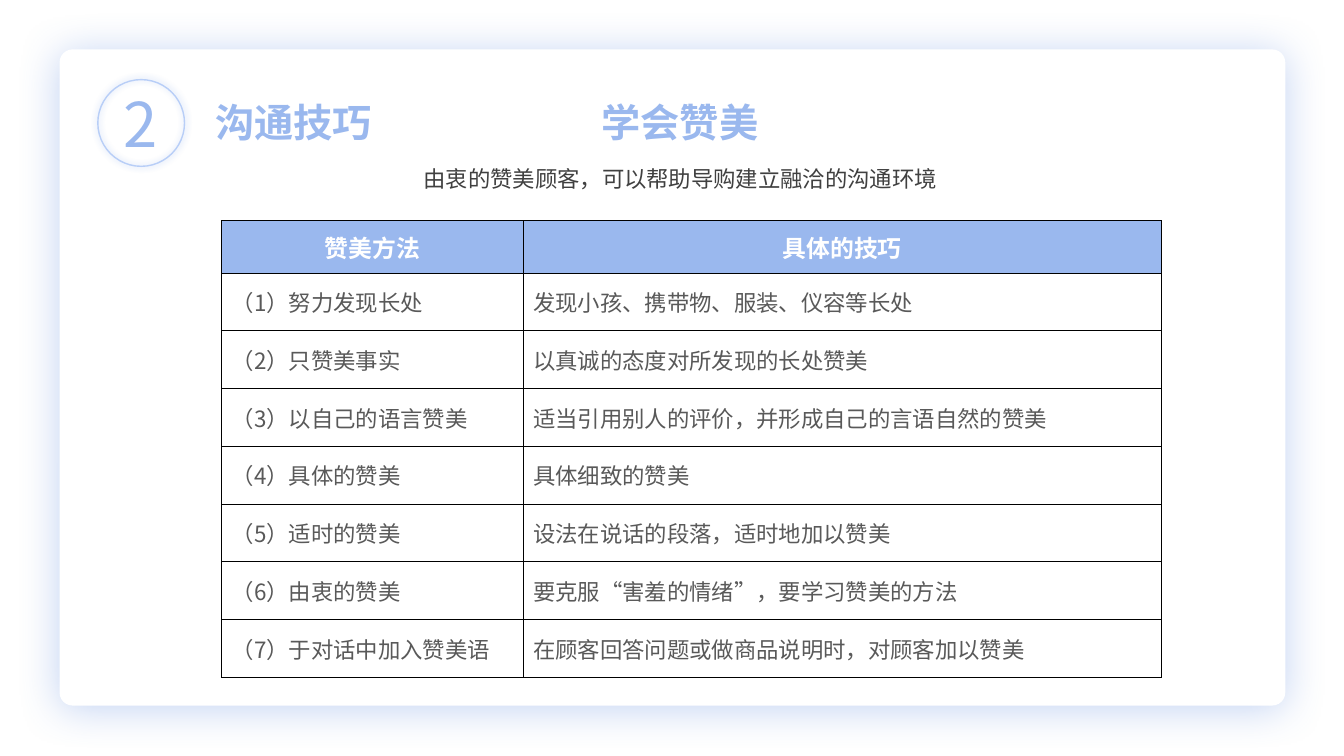
import pptx
import pptx.util
import pptx.dml.color
import pptx.enum.shapes
import pptx.enum.text
import pptx.oxml
import pptx.oxml.ns

THEME = {
    "font": "Noto Sans CJK SC",
    "accent": "9AB8EE", "ring": "B8CEF7", "white": "FFFFFF",
    "dark": "404040", "body": "595959", "border": "000000",
    "card_glow": "6891E1", "ring_glow": "3F78E2",
    "number": 44, "title": 28, "header": 17, "text": 16,
}
RGB = pptx.dml.color.RGBColor.from_string
ALIGN = pptx.enum.text.PP_ALIGN
SHAPE = pptx.enum.shapes.MSO_SHAPE
NS = pptx.oxml.ns.nsdecls("a")

prs = pptx.Presentation()
prs.slide_width = pptx.util.Inches(13.33)
prs.slide_height = pptx.util.Inches(7.5)
s = prs.slides.add_slide(prs.slide_layouts[6])
COL, ROW = prs.slide_width / 100, prs.slide_height / 100


def write(tf, text, size="text", color="body", bold=False, align=ALIGN.LEFT,
          spacing=None, before=None):
    p = tf.paragraphs[0]
    p.alignment = align
    p.line_spacing = spacing
    p.space_before = before
    r = p.add_run()
    r.text = text
    r.font.name = THEME["font"]
    r.font.size = pptx.util.Pt(THEME[size])
    r.font.bold = bold
    r.font.color.rgb = RGB(THEME[color])
    ea = pptx.oxml.parse_xml(f'<a:ea {NS} typeface="{THEME["font"]}"/>')
    r.font._element.find(pptx.oxml.ns.qn("a:latin")).addnext(ea)


def place(x, y, w, h):
    return int(x * COL), int(y * ROW), int(w * COL), int(h * ROW)


card = s.shapes.add_shape(SHAPE.ROUNDED_RECTANGLE, *place(4.43, 6.53, 91.2, 86.8))
card.adjustments[0] = 0.02
card.fill.solid()
card.fill.fore_color.rgb = RGB(THEME["white"])
card.line.fill.background()

ring = s.shapes.add_shape(SHAPE.OVAL, *place(7.28, 10.53, 6.45, 11.47))
ring.fill.background()
ring.line.color.rgb = RGB(THEME["ring"])
ring.line.width = pptx.util.Pt(1)

for sp, glow, blur, dist in ((card, "card_glow", 30, 3), (ring, "ring_glow", 5, 0)):
    sp.shadow.inherit = False
    sp._element.spPr.find(pptx.oxml.ns.qn("a:effectLst")).append(pptx.oxml.parse_xml(
        f'<a:outerShdw {NS} blurRad="{pptx.util.Pt(blur)}" dist="{pptx.util.Pt(dist)}" '
        f'dir="5400000" algn="ctr" rotWithShape="0"><a:srgbClr val="{THEME[glow]}">'
        '<a:alpha val="40000"/></a:srgbClr></a:outerShdw>'))

heading = dict(size="title", color="accent", bold=True)
for box, text, style in (
    ((7.88, 10.67, 5.1, 11.2), "2",
     dict(size="number", color="accent", align=ALIGN.CENTER)),
    ((15.3, 12.4, 23.7, 7.6), "沟通技巧", heading),
    ((30.98, 13.07, 39.23, 7.47), "学会赞美",
     dict(heading, align=ALIGN.CENTER, spacing=0.9, before=pptx.util.Pt(10))),
    ((25.43, 19.47, 50.4, 6.13), "由衷的赞美顾客，可以帮助导购建立融洽的沟通环境",
     dict(color="dark", align=ALIGN.CENTER, spacing=1.5)),
):
    tf = s.shapes.add_textbox(*place(*box)).text_frame
    tf.word_wrap = True
    write(tf, text, **style)

rows = [
    ("赞美方法", "具体的技巧"),
    ("努力发现长处", "发现小孩、携带物、服装、仪容等长处"),
    ("只赞美事实", "以真诚的态度对所发现的长处赞美"),
    ("以自己的语言赞美", "适当引用别人的评价，并形成自己的言语自然的赞美"),
    ("具体的赞美", "具体细致的赞美"),
    ("适时的赞美", "设法在说话的段落，适时地加以赞美"),
    ("由衷的赞美", "要克服“害羞的情绪”，要学习赞美的方法"),
    ("于对话中加入赞美语", "在顾客回答问题或做商品说明时，对顾客加以赞美"),
]
table = s.shapes.add_table(len(rows), 2, *place(16.5, 29.2, 69.9, 60.4)).table
table.first_row = table.horz_banding = False
for column, share in zip(table.columns, (22.43, 47.48)):
    column.width = int(share * COL)

for i, row in enumerate(rows):
    table.rows[i].height = int((7.64 if i else 6.93) * ROW)
    for j, text in enumerate(row):
        cell = table.cell(i, j)
        cell.vertical_anchor = pptx.enum.text.MSO_ANCHOR.MIDDLE
        cell.fill.solid()
        cell.fill.fore_color.rgb = RGB(THEME["white" if i else "accent"])
        if i:
            write(cell.text_frame, text if j else f"（{i}）{text}")
        else:
            write(cell.text_frame, text, size="header", color="white", bold=True,
                  align=ALIGN.CENTER)
        for k, side in enumerate(("lnL", "lnR", "lnT", "lnB")):
            cell._tc.tcPr.insert(k, pptx.oxml.parse_xml(
                f'<a:{side} {NS} w="{pptx.util.Pt(1)}"><a:solidFill>'
                f'<a:srgbClr val="{THEME["border"]}"/></a:solidFill></a:{side}>'))

prs.save("out.pptx")
